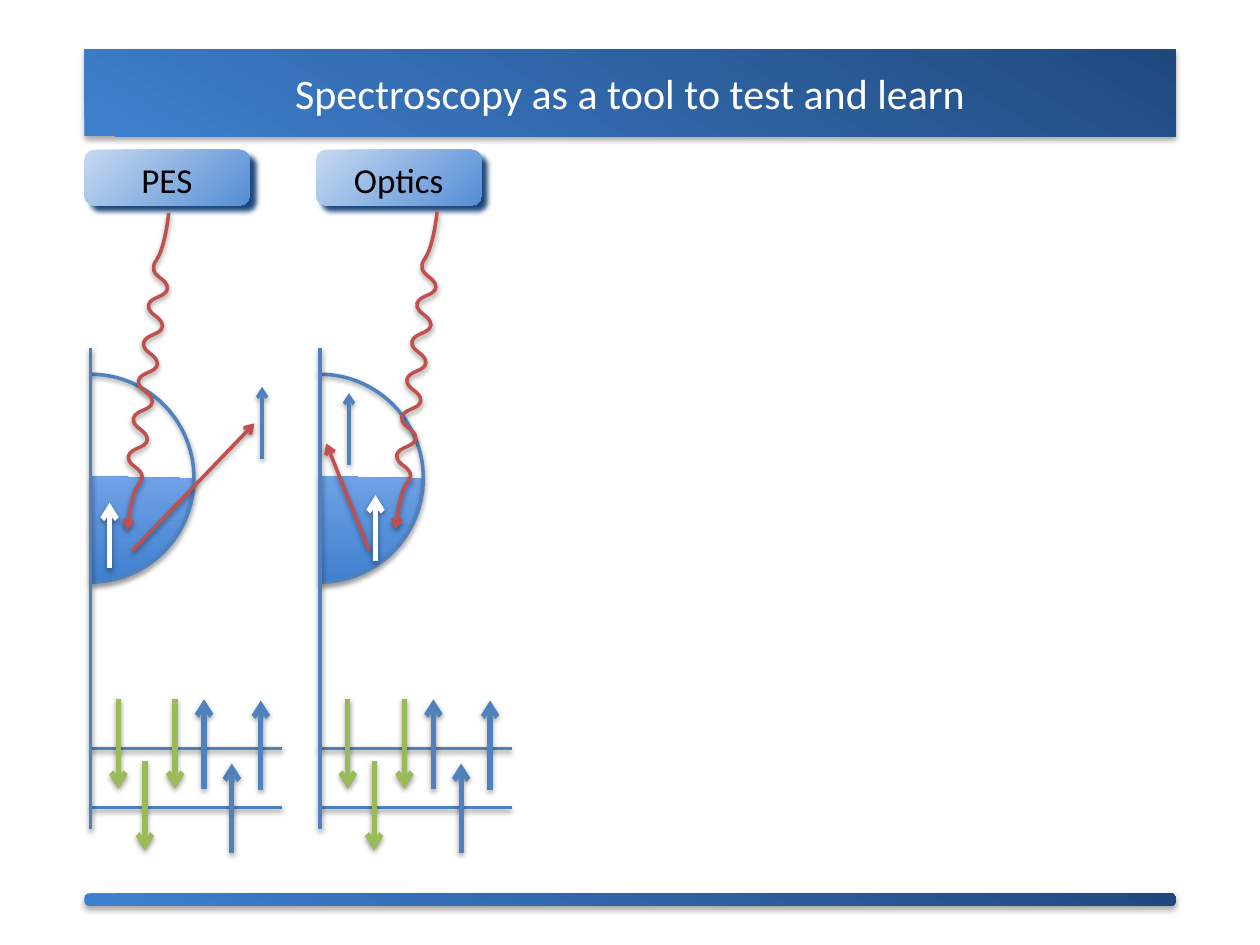
import pptx
import pptx.dml.color
import pptx.enum.shapes
import pptx.enum.text
import pptx.oxml
import pptx.oxml.ns
import pptx.util
from lxml import etree

Inches = pptx.util.Inches
qn = pptx.oxml.ns.qn
SHAPES = pptx.enum.shapes.MSO_SHAPE
ANCHOR = pptx.enum.text.MSO_ANCHOR

BLUE, GREEN, RED, WHITE = "4F81BD", "9BBB59", "C0504D", "FFFFFF"
BANNER_GRADIENT = ("3F80CE", "1F497D", 300)
LABEL_GRADIENT = ("C6D9F1", "558ED5", 45)
BAND_GRADIENT = ("3F80CE", "A4C4FF", 270)
FILL_SHADOW = ("000000", 35, 1.8, 90)
LINE_SHADOW = ("000000", 38, 1.6, 90)
LABEL_SHADOW = ("1F497D", 100, 5, 45)

UP_SPINS = [(0.9, 6.26), (1.12, 6.77), (1.35, 6.27)]
DOWN_SPINS = [(0.22, 5.55), (0.67, 5.55), (0.43, 6.04)]
SPIN_LENGTH = 0.71
WAVE_PERIOD = [(-0.01, 0.08), (0.11, 0.09), (0.11, 0.17),
               (0.10, 0.24), (-0.02, 0.23), (-0.04, 0.30)]


def rgb(hex_colour):
    """Turn a hex string into a colour."""
    return pptx.dml.color.RGBColor.from_string(hex_colour)


def set_shadow(shape, colour, opacity, distance, direction):
    """Give a shape a soft outer shadow."""
    effects = etree.SubElement(shape._element.spPr, qn("a:effectLst"))
    outer = etree.SubElement(effects, qn("a:outerShdw"), blurRad=str(pptx.util.Pt(3.1)),
                             dist=str(pptx.util.Pt(distance)), dir=str(direction * 60000),
                             rotWithShape="0")
    tint = etree.SubElement(outer, qn("a:srgbClr"), val=colour)
    etree.SubElement(tint, qn("a:alpha"), val=str(opacity * 1000))


def set_gradient(shape, start, end, angle):
    """Fill a shape with a clockwise-angled two-colour gradient and no outline."""
    shape.fill.gradient()
    shape.fill.gradient_angle = 360 - angle
    for stop, colour in zip(shape.fill.gradient_stops, (start, end)):
        stop.color.rgb = rgb(colour)
    shape.line.fill.background()


def set_stroke(shape, colour, width, arrow=False):
    """Colour a line, with an optional arrowhead at its end, and shade it."""
    shape.line.color.rgb = rgb(colour)
    shape.line.width = pptx.util.Pt(width)
    if arrow:
        outline = shape._element.spPr.find(qn("a:ln"))
        etree.SubElement(outline, qn("a:tailEnd"), type="arrow")
    set_shadow(shape, *LINE_SHADOW)


def write_text(shape, text, size, colour, anchor):
    """Write one centred line of text in a shape."""
    frame = shape.text_frame
    frame.word_wrap = True
    frame.vertical_anchor = anchor
    paragraph = frame.paragraphs[0]
    paragraph.alignment = pptx.enum.text.PP_ALIGN.CENTER
    run = paragraph.add_run()
    run.text = text
    run.font.name = "Calibri"
    run.font.size = pptx.util.Pt(size)
    run.font.color.rgb = rgb(colour)


def add_preset(shapes, preset, box, adjustments):
    """Add a preset shape at a box in inches."""
    shape = shapes.add_shape(preset, *map(Inches, box))
    for index, value in enumerate(adjustments):
        shape.adjustments[index] = value
    return shape


def add_filled(shapes, preset, box, adjustments, gradient, shadow):
    """Add a preset shape with a gradient and a shadow."""
    shape = add_preset(shapes, preset, box, adjustments)
    set_gradient(shape, *gradient)
    set_shadow(shape, *shadow)
    return shape


def add_line(shapes, start, end, colour=BLUE, width=2, arrow=False):
    """Add a straight line or arrow between two points in inches."""
    line = shapes.add_connector(pptx.enum.shapes.MSO_CONNECTOR.STRAIGHT,
                                *map(Inches, (*start, *end)))
    set_stroke(line, colour, width, arrow)


def add_curve(shapes, points):
    """Add a red arrow along cubic curves through a start and control triples."""
    start, *controls = [tuple(map(Inches, point)) for point in points]
    builder = shapes.build_freeform(*start)
    builder.add_line_segments(controls, close=False)
    curve = builder.convert_to_shape()
    outline = next(curve._element.iter(qn("a:path")))
    segments = outline.findall(qn("a:lnTo"))
    for first in range(0, len(segments), 3):
        bezier = etree.SubElement(outline, qn("a:cubicBezTo"))
        for segment in segments[first:first + 3]:
            bezier.append(segment[0])
            outline.remove(segment)
    curve.fill.background()
    set_stroke(curve, RED, 2, arrow=True)


def add_photon(shapes, x, y):
    """Draw the wavy incoming photon from its starting point."""
    points = [(x, y), (x - 0.05, y + 0.4), (x - 0.12, y + 0.36), (x - 0.12, y + 0.43)]
    for period in range(6):
        crest_x, crest_y = x - 0.12 - 0.04 * period, y + 0.43 + 0.3 * period
        offsets = WAVE_PERIOD if period < 5 else WAVE_PERIOD[:3]
        points += [(crest_x + dx, crest_y + dy) for dx, dy in offsets]
    points += [(x - 0.23, y + 2.18), (x - 0.28, y + 2.1), (x - 0.33, y + 2.52)]
    add_curve(shapes, points)


def add_title(slide, text):
    """Turn the title placeholder into the rounded banner."""
    title = slide.shapes.title
    title.left, title.top, title.width, title.height = map(Inches, (0.67, 0.39, 8.66, 0.69))
    geometry = pptx.oxml.parse_xml(
        f'<a:prstGeom {pptx.oxml.ns.nsdecls("a")} prst="roundRect"><a:avLst>'
        '<a:gd name="adj" fmla="val 23800"/></a:avLst></a:prstGeom>')
    title._element.spPr.find(qn("a:xfrm")).addnext(geometry)
    set_gradient(title, *BANNER_GRADIENT)
    set_shadow(title, *FILL_SHADOW)
    write_text(title, text, 24, WHITE, ANCHOR.MIDDLE)


def add_panel(slide, name, label_x, axis, photon, emission, hole, electron):
    """Draw one spectroscopy: label, band, levels, spins and excitation."""
    shapes = slide.shapes.add_group_shape().shapes
    label = add_filled(shapes, SHAPES.ROUNDED_RECTANGLE, (label_x, 1.19, 1.31, 0.44),
                       [0.172], LABEL_GRADIENT, LABEL_SHADOW)
    write_text(label, name, 20, "000000", ANCHOR.TOP)
    add_filled(shapes, SHAPES.PIE, (axis - 0.81, 2.94, 1.62, 1.68), [0.67, 54],
               BAND_GRADIENT, FILL_SHADOW)
    band_edge = add_preset(shapes, SHAPES.ARC, (axis - 0.82, 2.97, 1.64, 1.65), [162, 53.845])
    band_edge.fill.background()
    set_stroke(band_edge, BLUE, 2)
    for level in (5.94, 6.41):
        add_line(shapes, (axis, level), (axis + 1.52, level))
    add_line(shapes, (axis, 6.58), (axis, 2.76))
    for spins, colour, length in ((UP_SPINS, BLUE, -SPIN_LENGTH),
                                  (DOWN_SPINS, GREEN, SPIN_LENGTH)):
        for dx, y in spins:
            add_line(shapes, (axis + dx, y), (axis + dx, y + length), colour, 3, True)
    add_line(shapes, *emission, RED, 2, True)
    add_line(shapes, hole, (hole[0], hole[1] - 0.52), WHITE, 3, True)
    add_line(shapes, electron, (electron[0], electron[1] - 0.57), BLUE, 2, True)
    add_photon(shapes, *photon)


def main():
    """Build the slide and save it."""
    deck = pptx.Presentation()
    deck.slide_width, deck.slide_height = Inches(10), Inches(7.5)
    slide = deck.slides.add_slide(deck.slide_layouts[5])
    add_title(slide, "Spectroscopy as a tool to test and learn")
    add_filled(slide.shapes, SHAPES.ROUNDED_RECTANGLE, (0.67, 7.09, 8.66, 0.1), [0.377],
               BANNER_GRADIENT, FILL_SHADOW)
    add_panel(slide, "PES", label_x=0.67, axis=0.72, photon=(1.34, 1.69),
              emission=((1.05, 4.37), (2.02, 3.36)), hole=(0.87, 4.51), electron=(2.08, 3.64))
    add_panel(slide, "Optics", label_x=2.51, axis=2.54, photon=(3.47, 1.68),
              emission=((2.93, 4.37), (2.59, 3.52)), hole=(2.98, 4.45), electron=(2.77, 3.69))
    deck.save("out.pptx")


if __name__ == "__main__":
    main()
